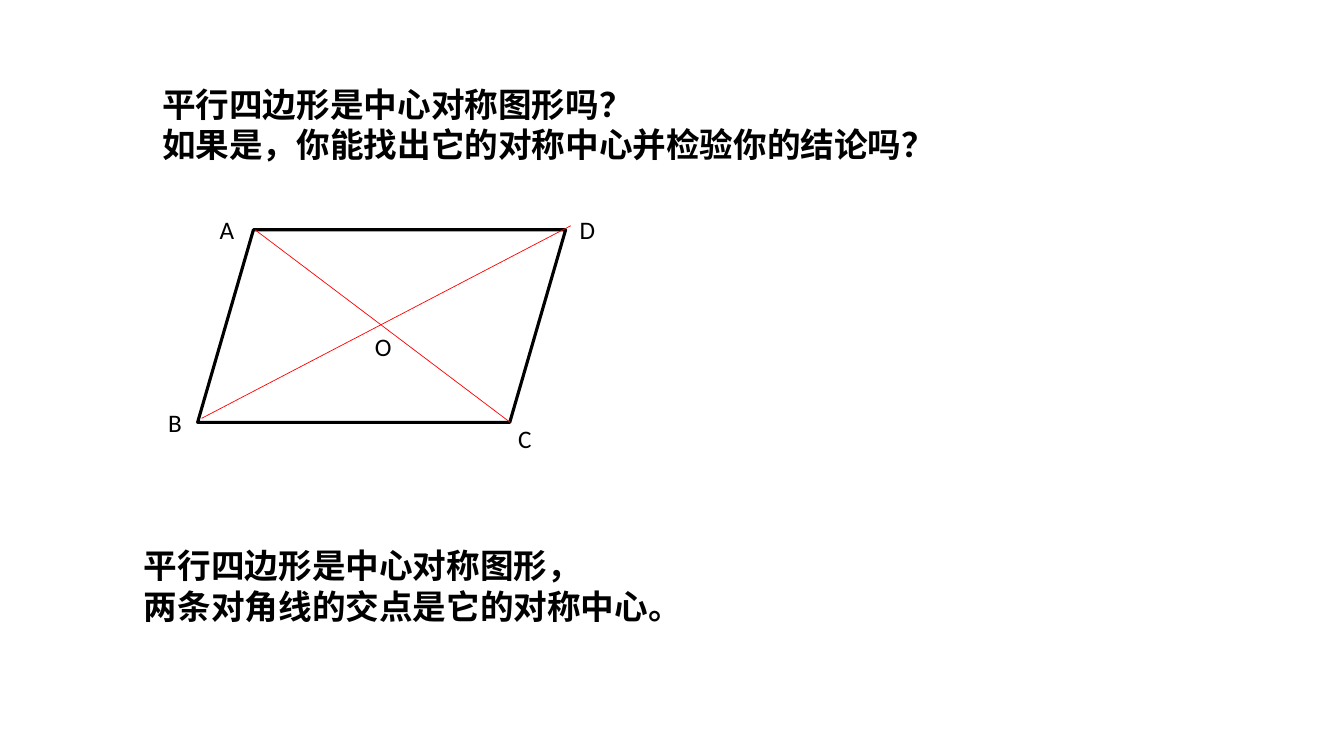
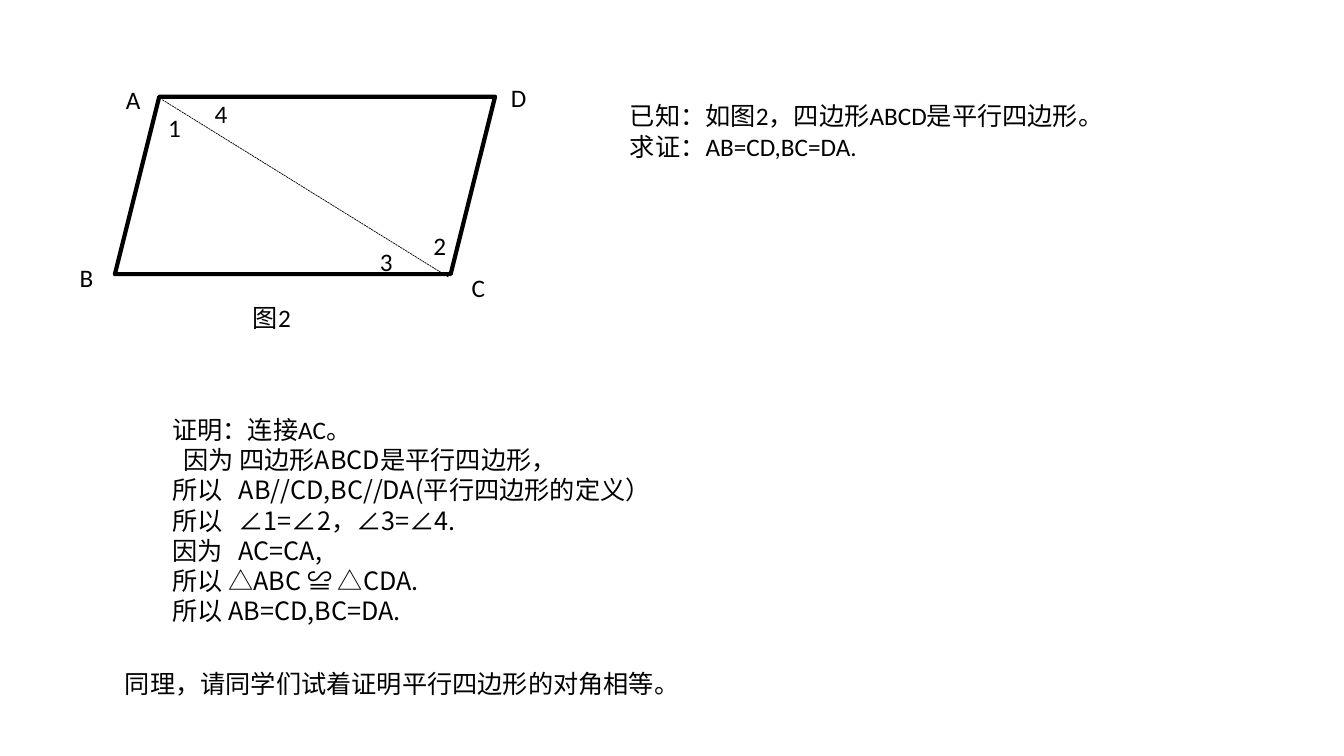
from pptx import Presentation, util as u
from pptx.dml.color import RGBColor
from pptx.enum import dml, shapes, text
from pptx.oxml.ns import qn
from lxml import etree

COLORS = {"ink": "000000", "paper": "FFFFFF", "diagonal": "FF0000"}
LATIN, CHINESE = "Calibri", "Noto Sans CJK SC"
HEADING = {"name": LATIN, "size": u.Pt(24), "bold": True}
BODY = {"name": LATIN, "size": u.Pt(18)}
PROOF = {**BODY, "name": CHINESE}


class Lesson:
    """Holds the deck, its style and the current page."""

    def __init__(self):
        self.deck = Presentation()
        self.deck.slide_width = u.Inches(13.33)
        self.deck.slide_height = u.Inches(7.5)
        self.page = None

    def new_page(self):
        self.page = self.deck.slides.add_slide(self.deck.slide_layouts[6])

    def color(self, name):
        return RGBColor.from_string(COLORS[name])

    def text_box(self, left, top, width, height, lines, style=BODY):
        """Add a text box with one paragraph a line and return its paragraphs."""
        box = self.page.shapes.add_textbox(*map(u.Inches, (left, top, width, height)))
        frame = box.text_frame
        frame.word_wrap = True
        frame.auto_size = text.MSO_AUTO_SIZE.SHAPE_TO_FIT_TEXT
        for index, line in enumerate(lines):
            para = frame.add_paragraph() if index else frame.paragraphs[0]
            span = para.add_run()
            span.text = line
            self.style_span(span, style)
        return frame.paragraphs

    def style_span(self, span, style):
        for key, value in style.items():
            setattr(span.font, key, value)
        span.font.color.rgb = self.color("ink")
        east_asian = etree.SubElement(span.font._element, qn("a:ea"))
        east_asian.set("typeface", CHINESE)

    def labels(self, places):
        for label, (left, top, width) in places.items():
            self.text_box(left, top, width, 0.4, [label])

    def parallelogram(self, left, top, width, height, slant, weight):
        shape = self.page.shapes.add_shape(
            shapes.MSO_SHAPE.PARALLELOGRAM, *map(u.Inches, (left, top, width, height)))
        shape.adjustments[0] = slant
        shape.shadow.inherit = False
        shape.fill.solid()
        shape.fill.fore_color.rgb = self.color("paper")
        shape.line.color.rgb = self.color("ink")
        shape.line.width = u.Pt(weight)

    def diagonal(self, start, end, color, dash=None):
        line = self.page.shapes.add_connector(
            shapes.MSO_CONNECTOR.STRAIGHT, *map(u.Inches, (*start, *end)))
        line.line.color.rgb = self.color(color)
        line.line.width = u.Pt(0.5)
        if dash:
            line.line.dash_style = dash
        etree.SubElement(line._element.spPr, qn("a:effectLst"))

    def tab_stop(self, para, position):
        tabs = etree.SubElement(para._p.get_or_add_pPr(), qn("a:tabLst"))
        etree.SubElement(tabs, qn("a:tab"), pos=str(u.Inches(position)), algn="l")


def symmetry_page(lesson):
    lesson.new_page()
    # Question
    lesson.text_box(1.51, 0.78, 7.69, 0.91, [
        "平行四边形是中心对称图形吗？",
        "如果是，你能找出它的对称中心并检验你的结论吗？"], HEADING)
    # Figure with both diagonals
    lesson.parallelogram(1.96, 2.28, 3.65, 1.91, 0.29, 2.25)
    lesson.diagonal((2, 4.15), (5.66, 2.24), "diagonal")
    lesson.diagonal((2.53, 2.28), (5.06, 4.19), "diagonal")
    lesson.labels({
        "A": (2.08, 2.08, 0.9), "B": (1.57, 3.99, 1.01), "C": (5.04, 4.15, 0.85),
        "D": (5.65, 2.08, 0.9), "O": (3.62, 3.24, 0.6)})
    # Conclusion
    lesson.text_box(1.33, 5.36, 9.73, 0.91, [
        "平行四边形是中心对称图形，",
        "两条对角线的交点是它的对称中心。"], HEADING)


def proof_page(lesson):
    lesson.new_page()
    # Figure with numbered angles
    lesson.parallelogram(1.14, 0.96, 3.77, 1.76, 0.25, 3)
    lesson.diagonal((1.61, 0.99), (4.45, 2.75), "ink", dml.MSO_LINE.SQUARE_DOT)
    lesson.labels({
        "图2": (2.41, 2.95, 1.33),
        "A": (1.15, 0.79, 0.88), "B": (0.69, 2.55, 0.92),
        "C": (4.58, 2.65, 1.26), "D": (4.97, 0.77, 0.76),
        "1": (1.57, 1.07, 0.54), "4": (2.03, 0.93, 0.75),
        "2": (4.2, 2.24, 0.49), "3": (3.67, 2.39, 0.49)})
    # Given and to prove
    lesson.text_box(6.15, 0.95, 6.54, 0.71, [
        "已知：如图2，四边形ABCD是平行四边形。",
        "求证：AB=CD,BC=DA."])
    # Proof
    paras = lesson.text_box(1.61, 4.06, 9.53, 2.22, [
        "证明：连接AC。",
        "因为 四边形ABCD是平行四边形，",
        "所以\tAB//CD,BC//DA(平行四边形的定义）",
        "所以\t∠1=∠2，∠3=∠4.",
        "因为\tAC=CA,",
        "所以 △ABC ≌ △CDA.",
        "所以 AB=CD,BC=DA."], PROOF)
    paras[0].runs[0].font.name = LATIN
    paras[1]._p.get_or_add_pPr().set("indent", str(u.Inches(0.11)))
    for para in paras[2:5]:
        lesson.tab_stop(para, 0.66)
    # Exercise
    lesson.text_box(1.14, 6.58, 5.57, 0.4, ["同理，请同学们试着证明平行四边形的对角相等。"])


def main():
    lesson = Lesson()
    symmetry_page(lesson)
    proof_page(lesson)
    lesson.deck.save("out.pptx")


if __name__ == "__main__":
    main()
